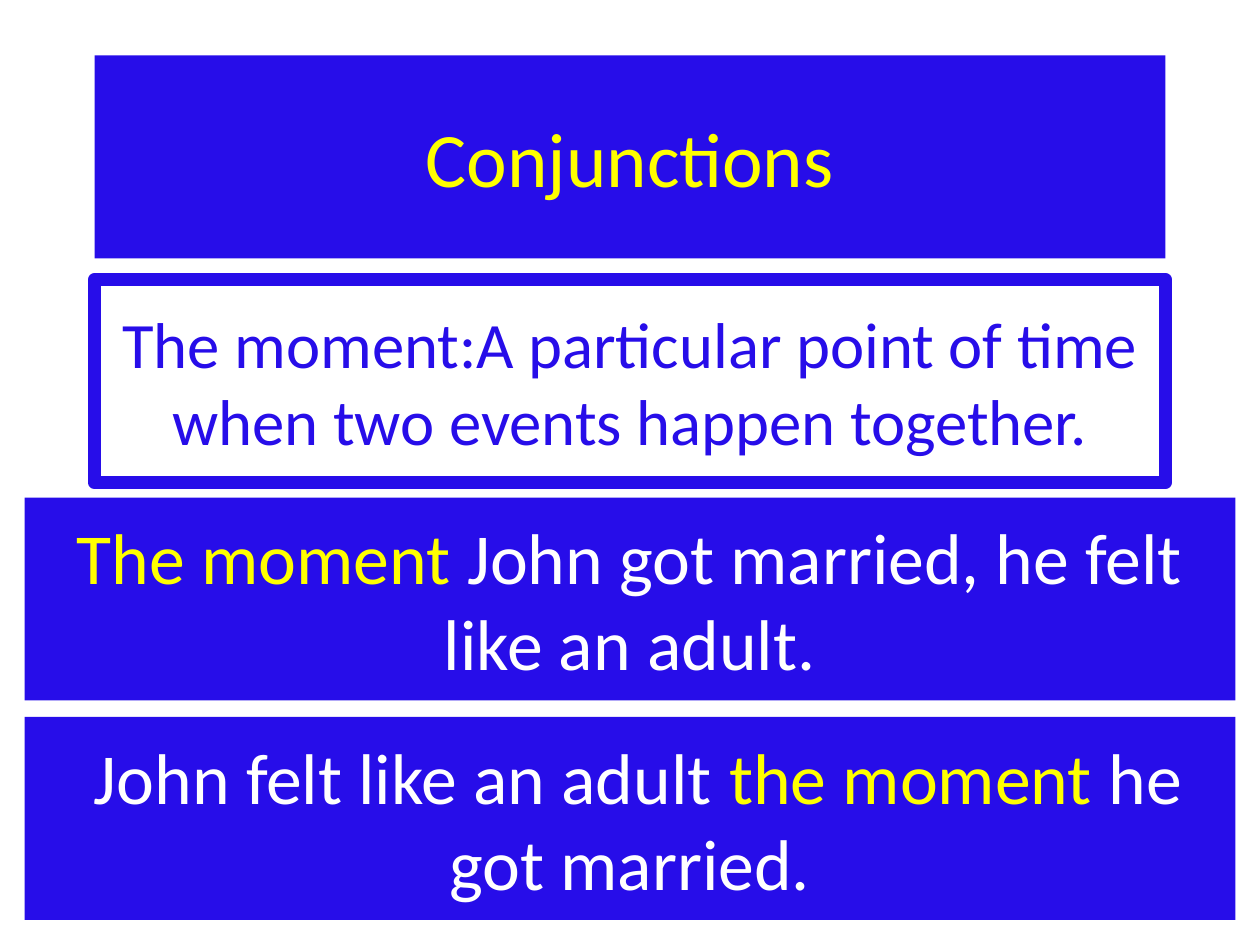
import pptx
import pptx.util
import pptx.dml.color
import pptx.enum.shapes
import pptx.enum.text
import pptx.oxml.ns
import lxml.etree

HUES = {"blue": "270DE9", "gold": "FFFF00", "white": "FFFFFF"}
WIDE, HIGH = 10, 7.5
ROWS = [0.44, 2.22, 3.95, 5.69]  # top of each band
TALL = 1.61
SLIM, FULL = 8.5, 9.61  # band widths


def hue(name):
    return pptx.dml.color.RGBColor.from_string(HUES[name])


def place(shape, row, width):
    """Centre a band across the slide on its row."""
    shape.left = pptx.util.Inches((WIDE - width) / 2)
    shape.top = pptx.util.Inches(ROWS[row])
    shape.width = pptx.util.Inches(width)
    shape.height = pptx.util.Inches(TALL)


def write(shape, size, parts):
    """Fill a band with centred text from (text, colour) parts."""
    frame = shape.text_frame
    frame.word_wrap = True
    frame.auto_size = pptx.enum.text.MSO_AUTO_SIZE.NONE
    frame.vertical_anchor = pptx.enum.text.MSO_ANCHOR.MIDDLE
    para = frame.paragraphs[0]
    para.alignment = pptx.enum.text.PP_ALIGN.CENTER
    para.font.name = "Calibri"
    para.font.size = pptx.util.Pt(size)
    for text, name in parts:
        run = para.add_run()
        run.text = text
        run.font.color.rgb = hue(name)


def paint(shape, name):
    shape.fill.solid()
    shape.fill.fore_color.rgb = hue(name)
    shape.line.fill.background()


def frame_in(shape, name, width):
    """Draw a thick border with round corners."""
    shape.line.color.rgb = hue(name)
    shape.line.width = pptx.util.Pt(width)
    edge = shape.element.spPr.find(pptx.oxml.ns.qn("a:ln"))
    lxml.etree.SubElement(edge, pptx.oxml.ns.qn("a:round"))


def add_band(slide, row, width, fill, size, parts):
    kind = pptx.enum.shapes.MSO_SHAPE.RECTANGLE
    band = slide.shapes.add_shape(kind, 0, 0, 0, 0)
    band.shadow.inherit = False
    place(band, row, width)
    paint(band, fill)
    write(band, size, parts)
    return band


def main():
    deck = pptx.Presentation()
    deck.slide_width = pptx.util.Inches(WIDE)
    deck.slide_height = pptx.util.Inches(HIGH)
    slide = deck.slides.add_slide(deck.slide_layouts[5])

    # Title
    title = slide.shapes.title
    place(title, 0, SLIM)
    paint(title, "blue")
    write(title, 44, [("Conjunctions", "gold")])

    # Meaning
    note = add_band(slide, 1, SLIM, "white", 37, [
        ("The moment:A particular point of time "
         "when two events happen together.", "blue")])
    frame_in(note, "blue", 7.5)

    # Examples
    add_band(slide, 2, FULL, "blue", 41, [
        ("The moment ", "gold"),
        ("John got married, he felt like an adult.", "white")])
    add_band(slide, 3, FULL, "blue", 41, [
        (" John felt like an adult ", "white"),
        ("the moment ", "gold"),
        ("he got married.", "white")])

    deck.save("out.pptx")


if __name__ == "__main__":
    main()
